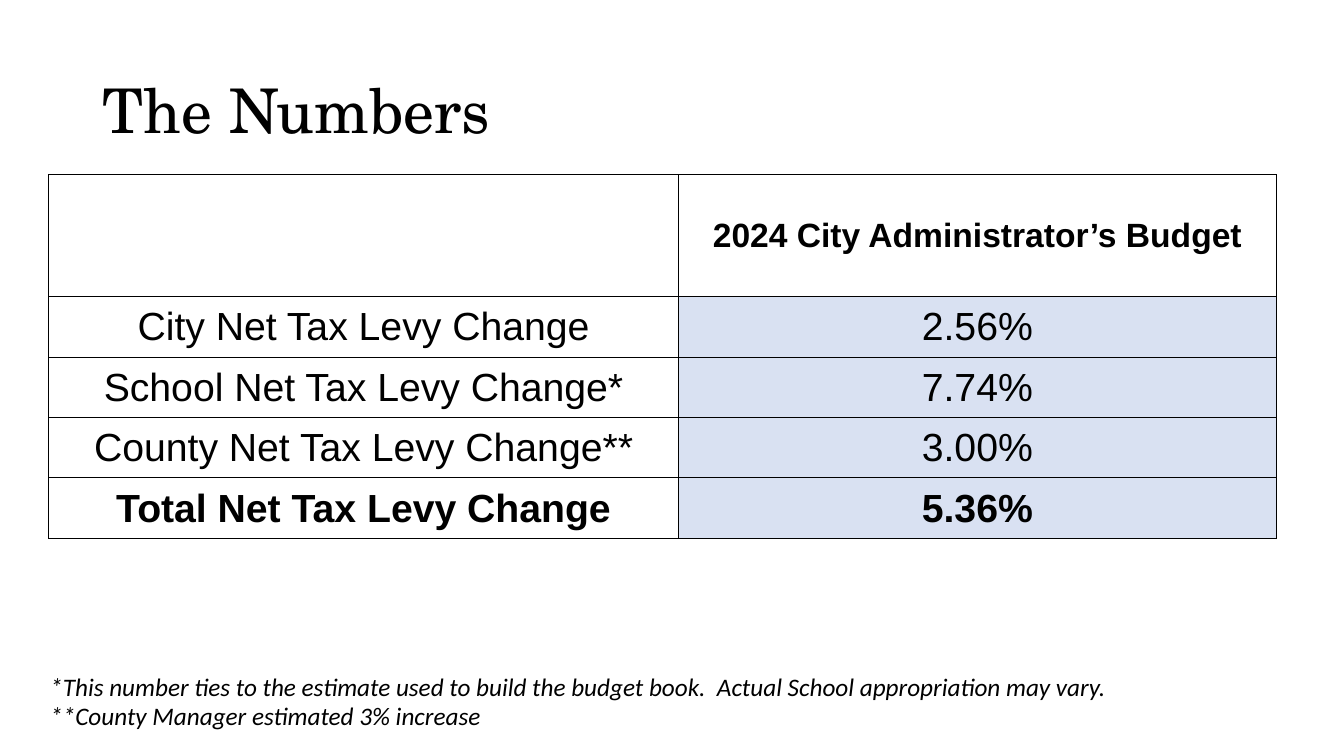
from lxml.etree import SubElement
from pptx import Presentation
from pptx.dml.color import RGBColor
from pptx.enum.text import MSO_ANCHOR as Anchor, MSO_AUTO_SIZE as AutoSize, PP_ALIGN as Align
from pptx.oxml.ns import qn
from pptx.util import Pt

BLACK = RGBColor(0x00, 0x00, 0x00)
PALE_BLUE = RGBColor(0xD9, 0xE1, 0xF2)

LEVY_ROWS = [
    ("", "2024 City Administrator’s Budget"),
    ("City Net Tax Levy Change", "2.56%"),
    ("School Net Tax Levy Change*", "7.74%"),
    ("County Net Tax Levy Change**", "3.00%"),
    ("Total Net Tax Levy Change", "5.36%"),
]


def write_text(frame, text, *, font, size, bold=False, italic=False,
               align=Align.LEFT, line_spacing=1.0):
    paragraph = frame.paragraphs[0]
    paragraph.alignment = align
    paragraph.line_spacing = line_spacing
    run = paragraph.add_run()
    run.text = text
    run.font.name = font
    run.font.size = Pt(size)
    run.font.bold = bold
    run.font.italic = italic
    run.font.color.rgb = BLACK


class LevySlide:
    title_font = "TeX Gyre Schola"
    table_font = "Arial"
    note_font = "Calibri"
    border_width = 0.5

    def __init__(self, presentation):
        self.slide = presentation.slides.add_slide(presentation.slide_layouts[5])

    def title(self, text, left, top, width, height):
        shape = self.slide.shapes.title
        shape.left, shape.top, shape.width, shape.height = map(Pt, (left, top, width, height))
        frame = shape.text_frame
        frame.auto_size = AutoSize.NONE
        frame.vertical_anchor = Anchor.MIDDLE
        write_text(frame, text, font=self.title_font, size=44, line_spacing=0.9)

    def table(self, rows, left, top, column_widths, row_heights):
        table = self.slide.shapes.add_table(
            len(rows), len(column_widths), Pt(left), Pt(top),
            Pt(sum(column_widths)), Pt(sum(row_heights))).table
        table.first_row = table.horz_banding = False
        for column, width in zip(table.columns, column_widths):
            column.width = Pt(width)
        for row, height in zip(table.rows, row_heights):
            row.height = Pt(height)
        last = len(rows) - 1
        for r, texts in enumerate(rows):
            for c, text in enumerate(texts):
                self.cell(table.cell(r, c), text, size=24 if r == 0 else 28,
                          bold=r in (0, last),
                          fill=PALE_BLUE if r and c else None)

    def cell(self, cell, text, *, size, bold, fill):
        cell.vertical_anchor = Anchor.MIDDLE
        cell.margin_left = cell.margin_right = cell.margin_top = Pt(0.75)
        cell.margin_bottom = 0
        self.borders(cell)
        if fill is None:
            cell.fill.background()
        else:
            cell.fill.solid()
            cell.fill.fore_color.rgb = fill
        if text:
            write_text(cell.text_frame, text, font=self.table_font, size=size,
                       bold=bold, align=Align.CENTER)

    def borders(self, cell):
        properties = cell._tc.get_or_add_tcPr()
        for side in ("a:lnL", "a:lnR", "a:lnT", "a:lnB"):
            line = SubElement(properties, qn(side), w=str(Pt(self.border_width)))
            SubElement(SubElement(line, qn("a:solidFill")), qn("a:srgbClr"), val=str(BLACK))

    def note(self, text, left, top, width, height):
        shape = self.slide.shapes.add_textbox(Pt(left), Pt(top), Pt(width), Pt(height))
        frame = shape.text_frame
        frame.word_wrap = True
        frame.auto_size = AutoSize.SHAPE_TO_FIT_TEXT
        write_text(frame, text, font=self.note_font, size=18, italic=True)


def main():
    presentation = Presentation()
    presentation.slide_width, presentation.slide_height = Pt(960), Pt(540)
    levy = LevySlide(presentation)

    # Title
    levy.title("The Numbers", 66, 28.75, 828, 104.4)

    # Levy change table
    levy.table(LEVY_ROWS, 34.6, 124.7, column_widths=[450, 427],
               row_heights=[87] + [43.2] * 4)

    # Footnotes
    levy.note("**County Manager estimated 3% increase", 28.8, 497, 325.5, 29)
    levy.note("*This number ties to the estimate used to build the budget book.  "
              "Actual School appropriation may vary.", 28.8, 476, 838.8, 29)

    presentation.save("out.pptx")


if __name__ == "__main__":
    main()
